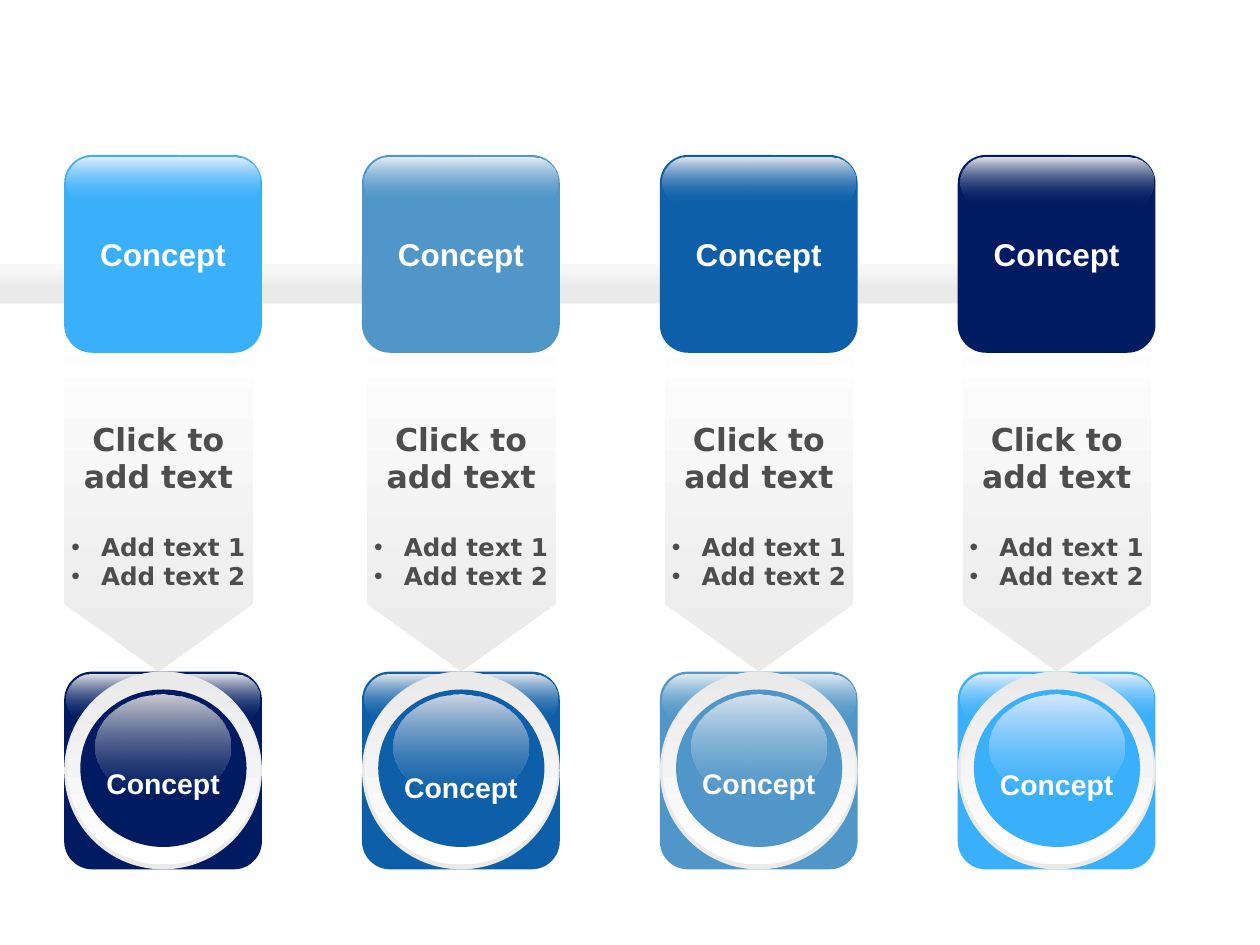
from collections import namedtuple

from lxml import etree
from pptx import Presentation
from pptx.dml.color import RGBColor
from pptx.enum.shapes import MSO_SHAPE
from pptx.enum.text import MSO_ANCHOR, PP_ALIGN
from pptx.oxml.ns import qn
from pptx.util import Pt

ROUNDED = MSO_SHAPE.ROUNDED_RECTANGLE
OVAL = MSO_SHAPE.OVAL
CENTER = PP_ALIGN.CENTER
MIDDLE = MSO_ANCHOR.MIDDLE

Tone = namedtuple("Tone", "base gloss dome")
TONES = [
    Tone("3AAFFA", "E5F0FE", "D7E8FD"),
    Tone("5096C8", "E6EDF4", "D9E3EE"),
    Tone("0C5FA8", "E4E7EF", "D0D5E3"),
    Tone("001B61", "E4E5E8", "CCCDD2"),
]
GREY, WHITE, TEXT_GREY = "EAEAEA", "FFFFFF", "4D4D4D"
FIRST_LEFT, COLUMN_PITCH, TILE = 36.7, 170.2, 113
TOP_ROW, BOTTOM_ROW = 88.6, 383.8
ARROW_WIDTH = 107.8
ARROW_SHIFTS = [0, 2.8, 2.8, 2.8]
LABEL_TOPS = [415.4, 417.6, 415.4, 416.2]


def color(value):
    return RGBColor.from_string(value)


class SlideBuilder:
    heading_font = "Arial"
    body_font = "DejaVu Sans"

    def __init__(self, page):
        self.page = page

    def shape(self, kind, left, top, width, height, fill, radius=None):
        box = self.page.shapes.add_shape(kind, Pt(left), Pt(top), Pt(width), Pt(height))
        box.shadow.inherit = False
        box.line.fill.background()
        if radius is not None:
            box.adjustments[0] = radius
        if isinstance(fill, str):
            box.fill.solid()
            box.fill.fore_color.rgb = color(fill)
        else:
            self.gradient(box, fill)
        return box

    def gradient(self, box, stops):
        box.fill.gradient()
        box.fill.gradient_angle = 270
        for stop, (value, _) in zip(box.fill.gradient_stops, stops):
            stop.color.rgb = color(value)
        nodes = box._element.spPr.iter(qn("a:srgbClr"))
        for node, (_, opacity) in zip(list(nodes), stops):
            if opacity < 100:
                etree.SubElement(node, qn("a:alpha"), val=str(opacity * 1000))

    def style(self, para, font, size, value):
        para.alignment = CENTER
        for span in para.runs:
            span.font.name = font
            span.font.size = Pt(size)
            span.font.bold = True
            span.font.color.rgb = color(value)

    def text_box(self, left, top, width, height):
        box = self.page.shapes.add_textbox(Pt(left), Pt(top), Pt(width), Pt(height))
        box.text_frame.word_wrap = True
        return box.text_frame

    def tile(self, left, top, tone):
        box = self.shape(ROUNDED, left, top, TILE, TILE, tone.base, 0.142)
        self.shape(ROUNDED, left + 1.6, top + 1.4, 110.2, 27.4,
                   [(tone.gloss, 100), (tone.base, 0)], 0.5)
        return box

    def concept_tile(self, left, tone):
        frame = self.tile(left, TOP_ROW, tone).text_frame
        frame.word_wrap = False
        frame.vertical_anchor = MIDDLE
        frame.text = "Concept"
        self.style(frame.paragraphs[0], self.heading_font, 18, WHITE)

    def concept_button(self, left, tone, label_top):
        top = BOTTOM_ROW
        self.tile(left, top, tone)
        self.shape(OVAL, left, top, TILE, TILE, GREY)
        self.shape(OVAL, left + 1.6, top, 110.2, 110.2, [(GREY, 100), (WHITE, 100)])
        self.shape(OVAL, left + 9.2, top + 10.2, 95, 90, tone.base)
        self.shape(OVAL, left + 18, top + 13, 77, 59.6,
                   [(tone.dome, 100), (tone.base, 37)])
        frame = self.text_box(left, label_top, TILE, 30.2)
        frame.text = "Concept"
        para = frame.paragraphs[0]
        self.style(para, self.heading_font, 28, WHITE)
        para.runs[0]._r.get_or_add_rPr().set("baseline", "-25000")

    def arrow(self, left):
        right = left + ARROW_WIDTH
        middle = left + ARROW_WIDTH / 2
        outlines = [[(right, 345), (right, 216), (left, 216), (left, 345), (middle, 383.6)]]
        for top, bottom in [(197.3, 209.5), (185, 191.3)]:
            outlines.append([(right, top), (left, top), (left, bottom), (right, bottom)])
        outlines = [[(Pt(x), Pt(y)) for x, y in outline] for outline in outlines]
        builder = self.page.shapes.build_freeform(*outlines[0][0])
        for outline in outlines:
            if outline is not outlines[0]:
                builder.move_to(*outline[0])
            builder.add_line_segments(outline[1:], close=True)
        box = builder.convert_to_shape()
        box.shadow.inherit = False
        box.line.fill.background()
        self.gradient(box, [(WHITE, 100), (GREY, 100)])

    def description(self, left):
        frame = self.text_box(left, 236.2, 124.6, 122.4)
        frame.text = "Click to add text\nAdd text 1\nAdd text 2"
        heading, *items = frame.paragraphs
        self.style(heading, self.body_font, 18, TEXT_GREY)
        for para in items:
            self.bullet(para)
            self.style(para, self.body_font, 14, TEXT_GREY)
        items[0].space_before = Pt(21)

    def bullet(self, para):
        props = para._p.get_or_add_pPr()
        props.set("marL", str(Pt(17)))
        props.set("indent", str(-Pt(17)))
        etree.SubElement(props, qn("a:buFont"), typeface="Arial")
        etree.SubElement(props, qn("a:buChar"), char="•")


def main():
    deck = Presentation()
    deck.slide_width, deck.slide_height = Pt(720), Pt(540)
    slide = SlideBuilder(deck.slides.add_slide(deck.slide_layouts[6]))
    lefts = [FIRST_LEFT + COLUMN_PITCH * index for index in range(len(TONES))]

    slide.shape(ROUNDED, 0, 151.2, 604, 22.3, GREY, 0)
    slide.shape(ROUNDED, 0, 151.9, 604, 12.2, [(WHITE, 67), (GREY, 100)], 0)
    for left, shift in zip(lefts, ARROW_SHIFTS):
        slide.arrow(left + shift)
        slide.description(left + shift - 8.5)
    for left, tone in zip(lefts, TONES):
        slide.concept_tile(left, tone)
    for left, tone, label_top in zip(lefts, reversed(TONES), LABEL_TOPS):
        slide.concept_button(left, tone, label_top)

    deck.save("out.pptx")


if __name__ == "__main__":
    main()
